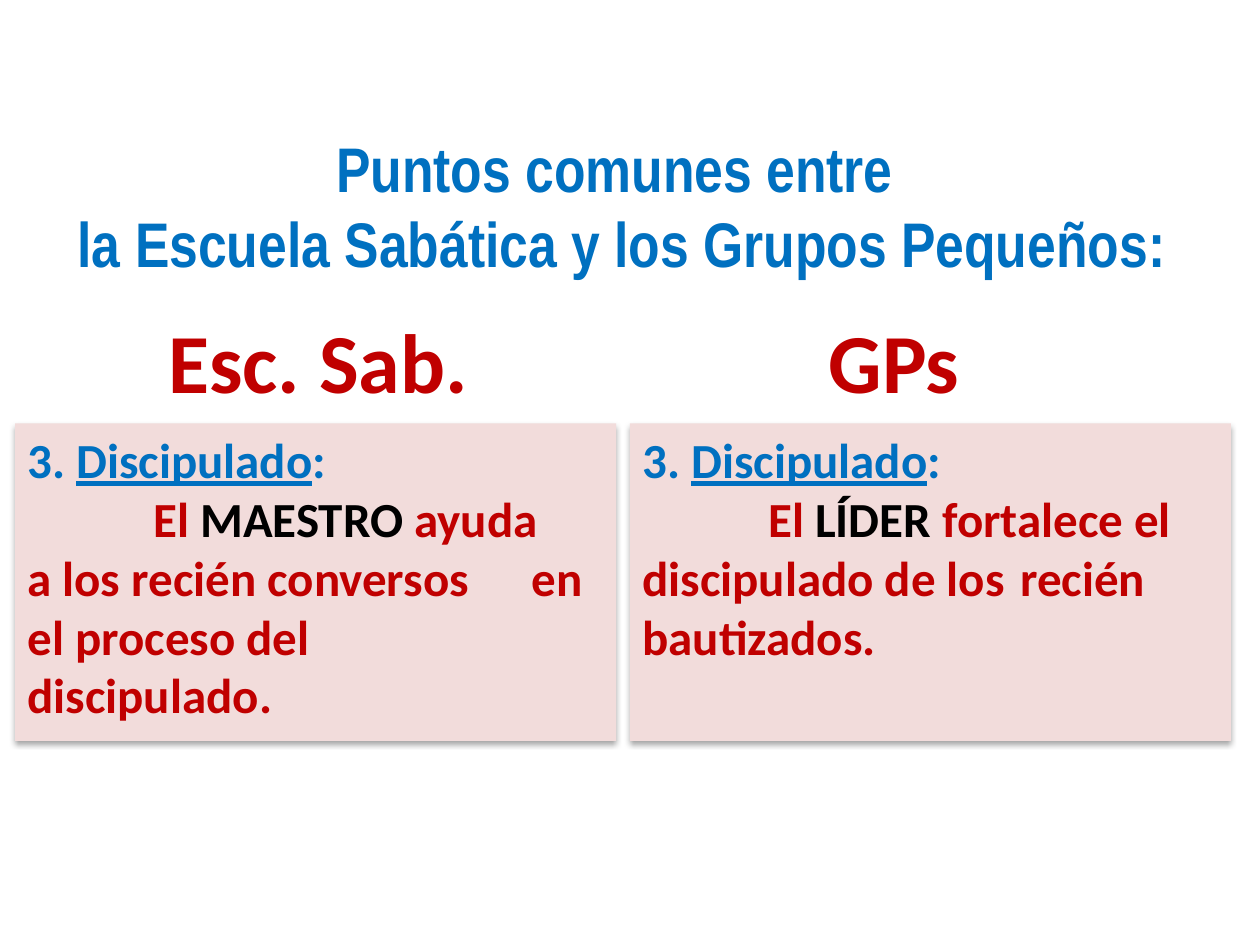
import pptx
import pptx.util
import pptx.dml.color
import pptx.enum.shapes
import pptx.enum.text
import pptx.oxml
import pptx.oxml.ns

Inches, Pt = pptx.util.Inches, pptx.util.Pt
RGBColor = pptx.dml.color.RGBColor
PP_ALIGN = pptx.enum.text.PP_ALIGN
BLUE = RGBColor(0x00, 0x70, 0xC0)
RED = RGBColor(0xC0, 0x00, 0x00)
BLACK = RGBColor(0x00, 0x00, 0x00)
PINK = RGBColor(0xF2, 0xDC, 0xDB)

# Two columns, with a heading row above a card row
COL_LEFT, COL_STEP, COL_WIDTH = 0.12, 4.88, 4.77
HEAD_TOP, HEAD_HEIGHT = 2.41, 0.91
CARD_TOP, CARD_HEIGHT = 3.36, 2.52

NS = pptx.oxml.ns.nsdecls("a")
SHADOW = (
    f'<a:effectLst {NS}>'
    f'<a:outerShdw blurRad="{Pt(3.1)}" dist="{Pt(1.8)}" dir="5400000" rotWithShape="0">'
    '<a:srgbClr val="000000"><a:alpha val="35000"/></a:srgbClr>'
    '</a:outerShdw></a:effectLst>'
)
# One tab stop per inch across a card
TABS = (
    f'<a:tabLst {NS}>'
    + "".join(f'<a:tab pos="{Inches(n)}" algn="l"/>' for n in range(1, 6))
    + '</a:tabLst>'
)

# Heading, heading left and width, then the card's role and the text after it
COLUMNS = [
    ("Esc. Sab.", 1.22, 2.61, "MAESTRO",
     " ayuda \ta los recién conversos \ten el proceso del \tdiscipulado."),
    ("GPs", 6.47, 1.25, "LÍDER",
     " fortalece el \tdiscipulado de los \trecién bautizados."),
]


def style(r, size, color, name="Calibri"):
    r.font.name, r.font.size, r.font.bold = name, Pt(size), True
    r.font.color.rgb = color


prs = pptx.Presentation()
prs.slide_width, prs.slide_height = Inches(10), Inches(7.5)
s = prs.slides.add_slide(prs.slide_layouts[6])

title = s.shapes.add_textbox(Inches(0.43), Inches(0.6), Inches(9.01), Inches(2.05))
tf = title.text_frame
tf.word_wrap = True
tf.vertical_anchor = pptx.enum.text.MSO_ANCHOR.MIDDLE
tf.text = "Puntos comunes entre \nla Escuela Sabática y los Grupos Pequeños:"
for p in tf.paragraphs:
    p.alignment = PP_ALIGN.CENTER
    style(p.runs[0], 36, BLUE, "Arial Narrow")

for i, (heading, left, width, role, task) in enumerate(COLUMNS):
    head = s.shapes.add_textbox(Inches(left), Inches(HEAD_TOP), Inches(width), Inches(HEAD_HEIGHT))
    tf = head.text_frame
    tf.word_wrap = False
    tf.text = heading
    p = tf.paragraphs[0]
    p.alignment = PP_ALIGN.CENTER
    style(p.runs[0], 48, RED)

    card = s.shapes.add_shape(
        pptx.enum.shapes.MSO_SHAPE.RECTANGLE, Inches(COL_LEFT + i * COL_STEP),
        Inches(CARD_TOP), Inches(COL_WIDTH), Inches(CARD_HEIGHT))
    card.fill.solid()
    card.fill.fore_color.rgb = PINK
    card.line.fill.background()
    card.element.spPr.append(pptx.oxml.parse_xml(SHADOW))
    tf = card.text_frame
    tf.word_wrap = True
    tf.vertical_anchor = pptx.enum.text.MSO_ANCHOR.TOP
    paragraphs = [
        [("3. ", BLUE), ("Discipulado", BLUE), (":", BLUE)],
        [("\tEl ", RED), (role, BLACK), (task, RED)],
    ]
    for j, runs in enumerate(paragraphs):
        p = tf.add_paragraph() if j else tf.paragraphs[0]
        p.alignment = PP_ALIGN.LEFT
        p._p.get_or_add_pPr().append(pptx.oxml.parse_xml(TABS))
        for text, color in runs:
            r = p.add_run()
            r.text = text
            style(r, 28, color)
    tf.paragraphs[0].runs[1].font.underline = True

prs.save("out.pptx")
